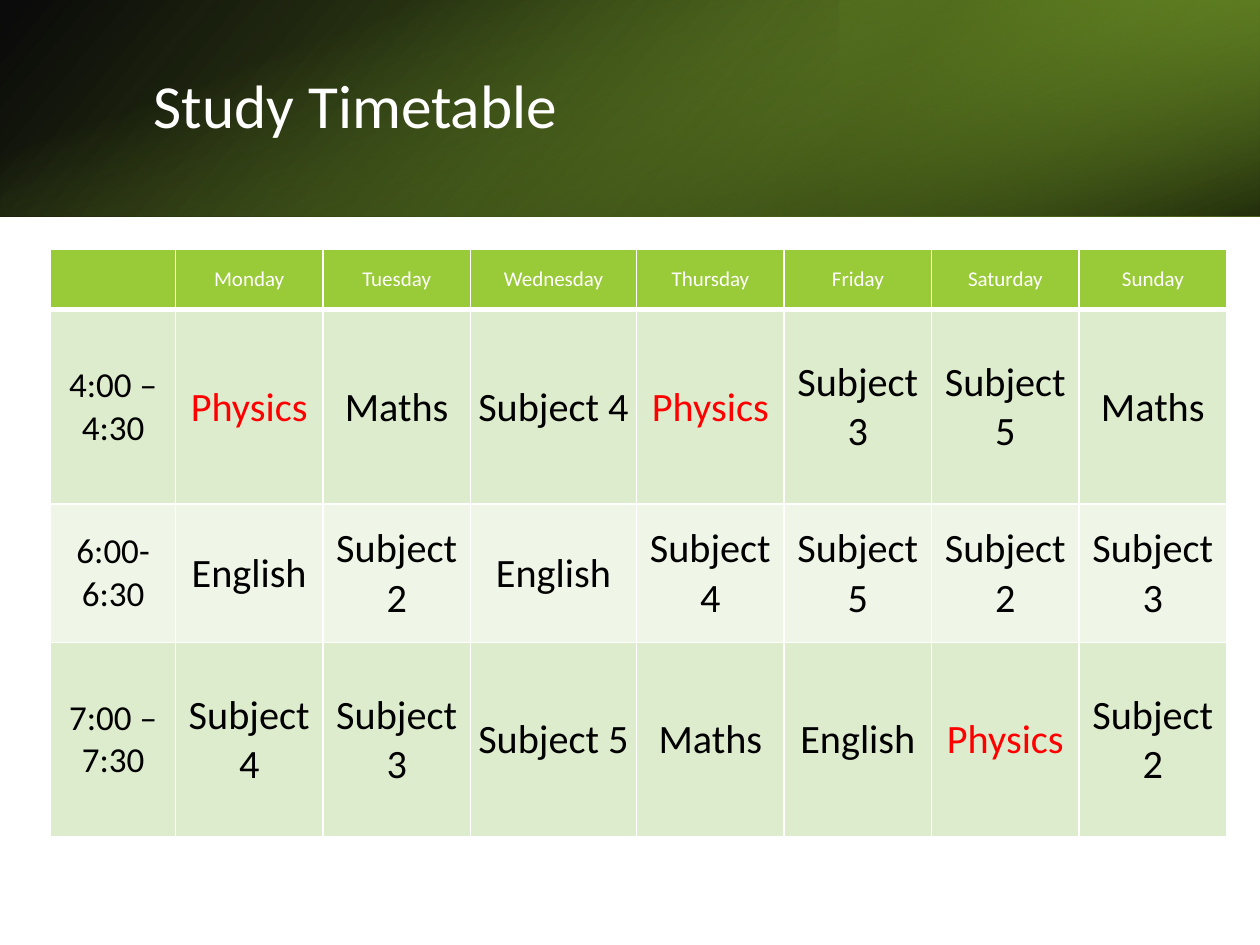
from dataclasses import dataclass
from pptx import Presentation
from pptx.dml.color import RGBColor
from pptx.enum.shapes import MSO_SHAPE
from pptx.enum.text import MSO_ANCHOR, MSO_AUTO_SIZE, PP_ALIGN
from pptx.oxml import parse_xml
from pptx.oxml.ns import nsdecls, qn
from pptx.util import Pt


@dataclass(frozen=True)
class Theme:
    font: str = "Calibri"
    white: str = "FFFFFF"
    black: str = "000000"
    lime: str = "99CB38"
    leaf: str = "739A28"
    moss: str = "4D671B"
    red: str = "FF0000"
    bands: tuple = ("DEECCE", "EFF6E8")
    title: int = 35
    day: int = 12
    time: int = 20
    task: int = 23


theme = Theme()
DAYS = ["", "Monday", "Tuesday", "Wednesday", "Thursday", "Friday", "Saturday", "Sunday"]
ROWS = [
    DAYS,
    ["4:00 – 4:30", "Physics", "Maths", "Subject 4", "Physics", "Subject 3", "Subject 5", "Maths"],
    ["6:00-6:30", "English", "Subject 2", "English", "Subject 4", "Subject 5", "Subject 2", "Subject 3"],
    ["7:00 – 7:30", "Subject 4", "Subject 3", "Subject 5", "Maths", "English", "Physics", "Subject 2"],
]
WIDE = [71.3, 84.3, 84.3, 95, 84.3, 84.3, 84.3, 84.3]
HIGH = [34.3, 111, 79.2, 111]


def style(frame, size, color, align):
    for para in frame.paragraphs:
        para.alignment = align
        for run in para.runs:
            font = run.font
            font.name, font.size, font.bold = theme.font, Pt(size), False
            font.color.rgb = RGBColor.from_string(color)


def shade(slide, box, stops, angle, turn=0, flip=False):
    rect = slide.shapes.add_shape(MSO_SHAPE.RECTANGLE, *map(Pt, box))
    rect.shadow.inherit = False
    rect.line.fill.background()
    rect.rotation = turn
    if flip:
        rect.element.spPr.get_or_add_xfrm().set("flipH", "1")
    rect.fill.gradient()
    rect.fill.gradient_angle = 360 - angle
    for stop, (place, color, alpha) in zip(rect.fill.gradient_stops, stops):
        stop.position = place / 100
        stop.color.rgb = RGBColor.from_string(color)
    for node, (place, color, alpha) in zip(rect.element.spPr.iter(qn("a:srgbClr")), stops):
        node.append(parse_xml(f'<a:alpha {nsdecls("a")} val="{alpha * 1000}"/>'))


def banner(slide, box):
    x, y, w, h = box
    shade(slide, box, [(0, theme.black, 96), (100, theme.leaf, 100)], 140, flip=True)
    shade(slide, (x + w * 2 / 3, y, w / 3, h),
          [(19, theme.moss, 68), (100, theme.lime, 79)], 320, 180, True)
    shade(slide, (x + (w - h) / 2, y + (h - w) / 2, h, w),
          [(23, theme.lime, 0), (99, theme.black, 74)], 340, 90)
    title = slide.shapes.title
    slide.shapes.element.append(title.element)
    title.left, title.top = Pt(x + 80.6), Pt(y + 27.4)
    title.width, title.height = Pt(593.3), Pt(69.1)
    frame = title.text_frame
    frame.text = "Study Timetable"
    frame.auto_size = MSO_AUTO_SIZE.NONE
    frame.vertical_anchor = MSO_ANCHOR.MIDDLE
    frame.paragraphs[0].line_spacing = 0.9
    style(frame, theme.title, theme.white, PP_ALIGN.LEFT)


def edge(cell, low):
    props = cell._tc.get_or_add_tcPr()
    for spot, side in enumerate("LRTB"):
        width = Pt(low if side == "B" else 1)
        props.insert(spot, parse_xml(
            f'<a:ln{side} {nsdecls("a")} w="{width}"><a:solidFill>'
            f'<a:srgbClr val="{theme.white}"/></a:solidFill></a:ln{side}>'))


def fill(cell, text, row, col):
    head, task = row == 0, row > 0 and col > 0
    size = theme.day if head else theme.task if task else theme.time
    color = theme.white if head else theme.red if text == "Physics" else theme.black
    tone = theme.lime if head else theme.bands[(row - 1) % 2]
    cell.fill.solid()
    cell.fill.fore_color.rgb = RGBColor.from_string(tone)
    cell.vertical_anchor = MSO_ANCHOR.MIDDLE
    cell.margin_left = cell.margin_right = Pt(0.7 if task else 7.9)
    cell.margin_top = Pt(0.7 if task else 4.3)
    cell.margin_bottom = Pt(0 if task else 4.3)
    cell.text_frame.text = text
    style(cell.text_frame, size, color, PP_ALIGN.CENTER)
    edge(cell, 3 if head else 1)


def grid(slide, box):
    table = slide.shapes.add_table(len(ROWS), len(DAYS), *map(Pt, box)).table
    for col, width in zip(table.columns, WIDE):
        col.width = Pt(width)
    for line, height in zip(table.rows, HIGH):
        line.height = Pt(height)
    for row, texts in enumerate(ROWS):
        for col, text in enumerate(texts):
            fill(table.cell(row, col), text, row, col)


def main():
    deck = Presentation()
    deck.slide_width, deck.slide_height = Pt(720), Pt(540)
    slide = deck.slides.add_slide(deck.slide_layouts[5])
    banner(slide, (0, 0, 720, 124))
    grid(slide, (29, 142.6, sum(WIDE), sum(HIGH)))
    deck.save("out.pptx")


if __name__ == "__main__":
    main()
